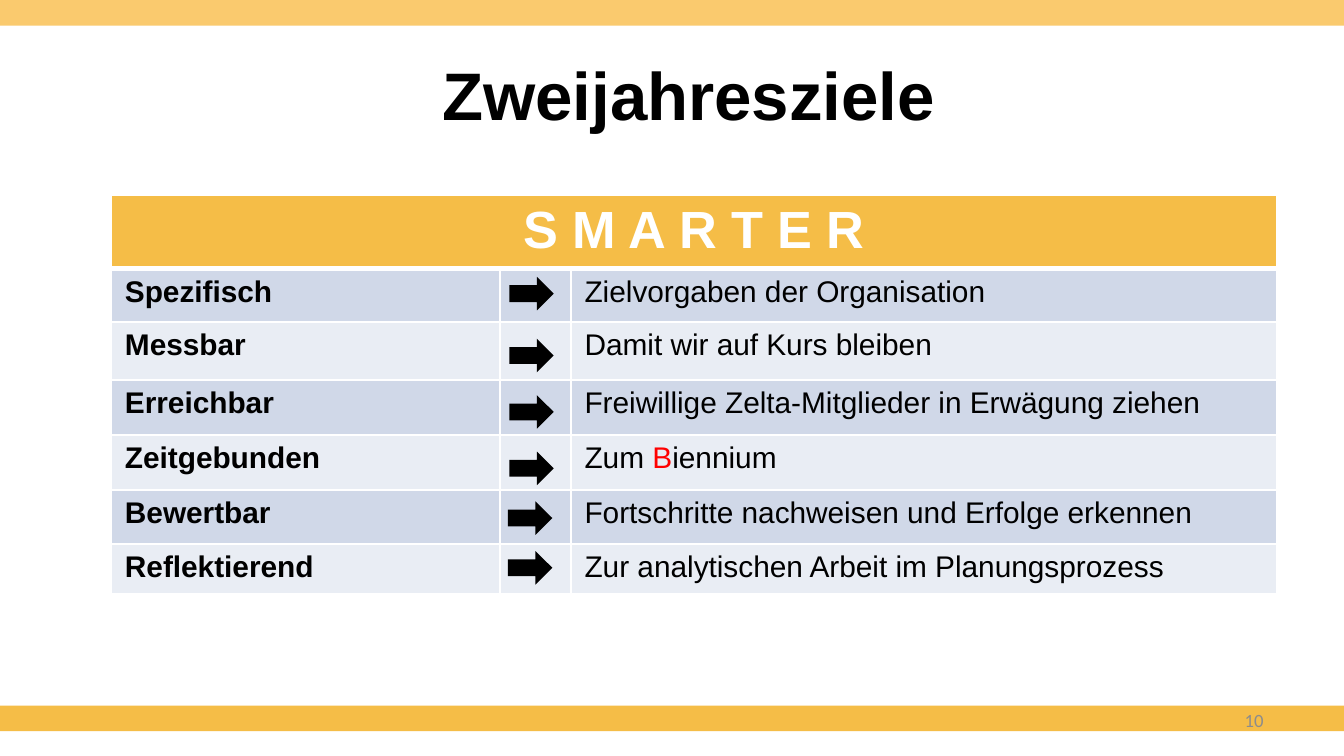
"""Build the slide on SMARTER two-year goals."""
import pptx
import pptx.util
import pptx.oxml
import pptx.dml.color
import pptx.enum.shapes
import pptx.enum.text

Inches = pptx.util.Inches
ALIGN = pptx.enum.text.PP_ALIGN
MIDDLE = pptx.enum.text.MSO_ANCHOR.MIDDLE
SHAPE = pptx.enum.shapes.MSO_SHAPE
RULE = (
    '<a:lnB xmlns:a="http://schemas.openxmlformats.org/drawingml/2006/main" w="38100">'
    '<a:solidFill><a:srgbClr val="FFFFFF"/></a:solidFill></a:lnB>'
)


def paint(target, color):
    if hasattr(target, "solid"):
        target.solid()
        target = target.fore_color
    target.rgb = pptx.dml.color.RGBColor.from_string(color)


def style(frame, size, color, bold=False, align=ALIGN.LEFT, face="Arial"):
    para = frame.paragraphs[0]
    para.alignment = align
    for run in para.runs:
        run.font.name = face
        run.font.size = pptx.util.Pt(size)
        run.font.bold = bold
        paint(run.font.color, color)


deck = pptx.Presentation()
deck.slide_width = Inches(10)
deck.slide_height = deck.slide_width * 9 // 16
slide = deck.slides.add_slide(deck.slide_layouts[5])
shapes = slide.shapes

title = shapes.title
title.left, title.top = Inches(0.75), Inches(0.23)
title.width, title.height = Inches(8.75), Inches(0.94)
title.text_frame.text = "Zweijahresziele"
title.text_frame.vertical_anchor = MIDDLE
style(title.text_frame, 36, "000000", True, ALIGN.CENTER)

for top, color in [(5.25, "F5BD47"), (0, "FACA6E")]:
    band = shapes.add_shape(SHAPE.RECTANGLE, 0, Inches(top), Inches(10), Inches(0.19))
    band.shadow.inherit = False
    paint(band.fill, color)
    band.line.fill.background()

number = shapes.add_textbox(Inches(7.17), Inches(5.21), Inches(2.33), Inches(0.3))
number.text_frame.word_wrap = True
number.text_frame.vertical_anchor = MIDDLE
number.text_frame.text = "10"
style(number.text_frame, 10, "8C8C8C", align=ALIGN.RIGHT, face="Calibri")

goals = [
    ("Spezifisch", ["Zielvorgaben der Organisation"]),
    ("Messbar", ["Damit wir auf Kurs bleiben"]),
    ("Erreichbar", ["Freiwillige Zelta-Mitglieder in Erwägung ziehen"]),
    ("Zeitgebunden", ["Zum ", "B", "iennium"]),
    ("Bewertbar", ["Fortschritte nachweisen und Erfolge erkennen"]),
    ("Reflektierend", ["Zur analytischen Arbeit im Planungsprozess"]),
]
frame = shapes.add_table(7, 3, Inches(0.83), Inches(1.45), Inches(8.67), Inches(2.99))
table = frame.table
for column, width in zip(table.columns, [2.89, 0.53, 5.25]):
    column.width = Inches(width)
for row, height in zip(table.rows, [0.53, 0.4, 0.43, 0.41, 0.41, 0.4, 0.37]):
    row.height = Inches(height)

head = table.cell(0, 0)
head.merge(table.cell(0, 2))
head.margin_bottom = Inches(0.03)
head.text_frame.text = "S M A R T E R"
style(head.text_frame, 28, "FFFFFF", True, ALIGN.CENTER)
for cell in table.rows[0].cells:
    paint(cell.fill, "F5BD47")
    cell._tc.get_or_add_tcPr().insert(0, pptx.oxml.parse_xml(RULE))

for index, (goal, parts) in enumerate(goals, 1):
    name, gap, note = table.rows[index].cells
    for cell in (name, gap, note):
        paint(cell.fill, "D0D8E8" if index % 2 else "E9EDF4")
    name.text_frame.text = goal
    style(name.text_frame, 16, "000000", True)
    gap.text_frame.paragraphs[0]._p.get_or_add_endParaRPr().set("sz", "1600")
    for part in parts:
        note.text_frame.paragraphs[0].add_run().text = part
    style(note.text_frame, 16, "000000")
    if len(parts) > 1:
        paint(note.text_frame.paragraphs[0].runs[1].font.color, "FF0000")

for index, top in enumerate([2.06, 2.52, 2.94, 3.36, 3.73, 4.1]):
    left = 3.79 if index < 4 else 3.78
    arrow = shapes.add_shape(
        SHAPE.RIGHT_ARROW, Inches(left), Inches(top), Inches(0.33), Inches(0.25))
    arrow.shadow.inherit = False
    paint(arrow.fill, "000000")
    arrow.line.fill.background()

deck.save("out.pptx")
